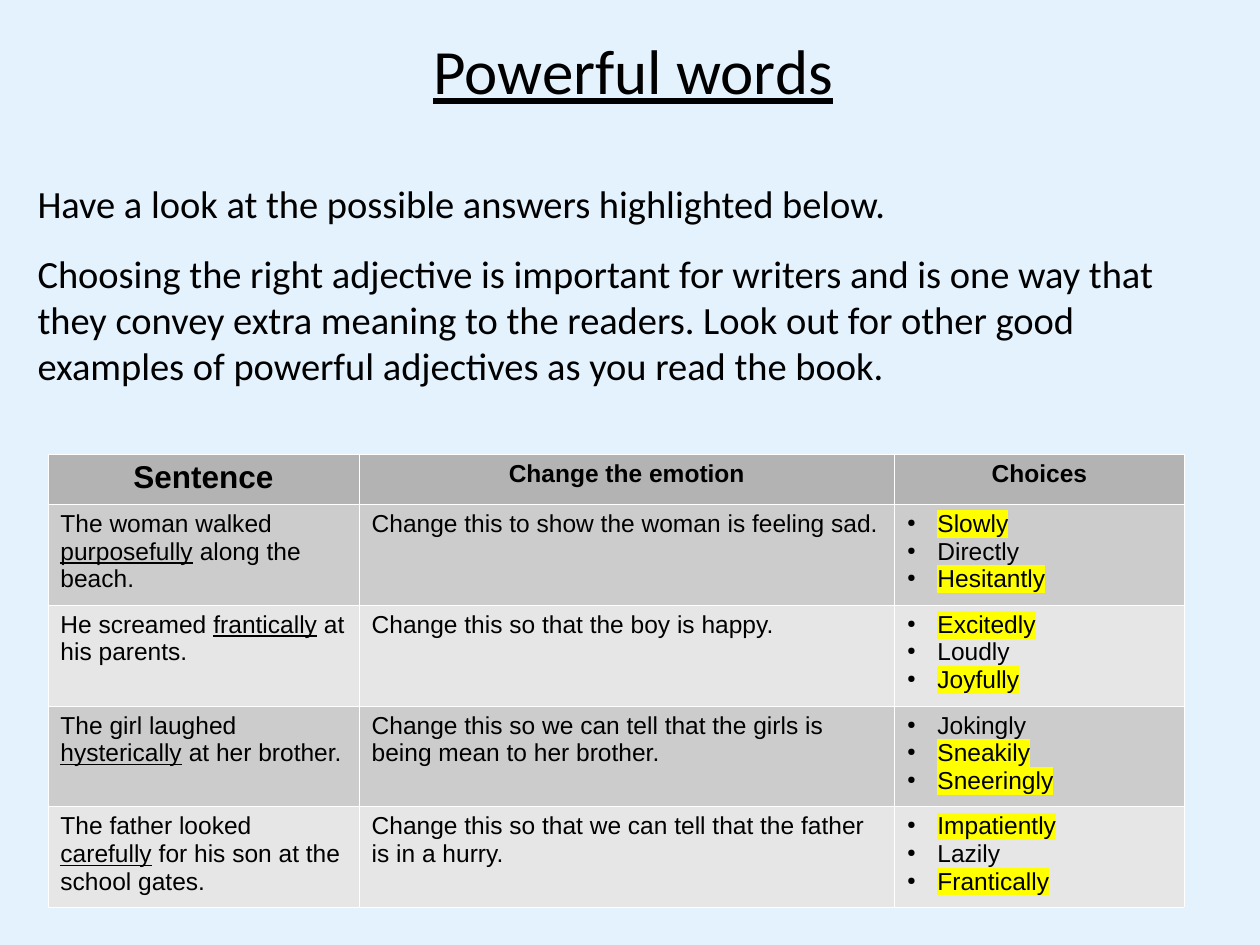
from copy import deepcopy
from dataclasses import dataclass

from lxml.etree import SubElement
from pptx import Presentation
from pptx.dml.color import RGBColor
from pptx.enum.text import MSO_ANCHOR, MSO_AUTO_SIZE, PP_ALIGN
from pptx.oxml import parse_xml
from pptx.oxml.ns import nsdecls, qn
from pptx.util import Inches, Pt

W, H = 10, 7.5
BLACK, YELLOW = "000000", "FFFF00"
HEADER_FILL, BAND_FILLS = "B3B3B3", ("CCCCCC", "E6E6E6")
COLUMNS = (2.47, 4.25, 2.3)
HEADER_H, ROW_H = 0.4, 0.8


@dataclass(frozen=True)
class Run:
    text: str
    size: float = 14
    font: str = "Arial"
    bold: bool = False
    underline: bool = False
    highlight: str = ""


@dataclass(frozen=True)
class Exercise:
    before: str
    word: str
    after: str
    change: str
    choices: tuple[str, ...]
    answers: tuple[int, ...]


HEADINGS = (("Sentence", 18), ("Change the emotion", 14), ("Choices", 14))
EXERCISES = (
    Exercise("The woman walked ", "purposefully", " along the beach.",
             "Change this to show the woman is feeling sad.",
             ("Slowly", "Directly", "Hesitantly"), (0, 2)),
    Exercise("He screamed ", "frantically", " at his parents.",
             "Change this so that the boy is happy.",
             ("Excitedly", "Loudly", "Joyfully"), (0, 2)),
    Exercise("The girl laughed ", "hysterically", " at her brother.",
             "Change this so we can tell that the girls is being mean to her brother.",
             ("Jokingly", "Sneakily", "Sneeringly"), (1, 2)),
    Exercise("The father looked", " carefully", " for his son at the school gates.",
             "Change this so that we can tell that the father is in a hurry.",
             ("Impatiently", "Lazily", "Frantically"), (0, 2)),
)
BODY = (
    "Have a look at the possible answers highlighted below.",
    "Choosing the right adjective is important for writers and is one way that "
    "they convey extra meaning to the readers. Look out for other good examples "
    "of powerful adjectives as you read the book.",
)


def color(value: str) -> RGBColor:
    return RGBColor.from_string(value)


def add_run(p, run: Run) -> None:
    r = p.add_run()
    r.text = run.text
    f = r.font
    f.size, f.name, f.bold, f.underline = Pt(run.size), run.font, run.bold, run.underline
    f.color.rgb = color(BLACK)
    if run.highlight:
        mark = parse_xml(f'<a:highlight {nsdecls("a")}><a:srgbClr val="{run.highlight}"/>'
                         '</a:highlight>')
        r._r.rPr.find(qn("a:solidFill")).addnext(mark)


def add_bullet(p) -> None:
    pPr = p._p.get_or_add_pPr()
    indent = Inches(0.24)
    pPr.set("marL", str(indent))
    pPr.set("indent", str(-indent))
    SubElement(SubElement(pPr, qn("a:buClr")), qn("a:srgbClr"), val=BLACK)
    SubElement(pPr, qn("a:buSzPct"), val="45000")
    SubElement(pPr, qn("a:buChar"), char="●")


def set_frame(tf) -> None:
    tf.word_wrap = True
    tf.auto_size = MSO_AUTO_SIZE.NONE
    tf.vertical_anchor = MSO_ANCHOR.TOP
    tf.margin_left = tf.margin_right = Inches(0.1)
    tf.margin_top = tf.margin_bottom = Inches(0.05)


def fill_cell(cell, fill: str, paragraphs: list[list[Run]],
              align=PP_ALIGN.LEFT, bullets: bool = False) -> None:
    cell.fill.solid()
    cell.fill.fore_color.rgb = color(fill)
    cell.margin_left = cell.margin_right = Inches(0.1)
    cell.margin_top = cell.margin_bottom = Inches(0.05)
    # White hairlines on all four sides
    for i, side in enumerate(("lnL", "lnR", "lnT", "lnB")):
        line = parse_xml(f'<a:{side} {nsdecls("a")} w="{Pt(0.06)}"><a:solidFill>'
                         f'<a:srgbClr val="FFFFFF"/></a:solidFill></a:{side}>')
        cell._tc.tcPr.insert(i, line)
    tf = cell.text_frame
    for i, runs in enumerate(paragraphs):
        p = tf.paragraphs[0] if i == 0 else tf.add_paragraph()
        p.alignment = align
        if bullets:
            add_bullet(p)
        for run in runs:
            add_run(p, run)


def add_body(s):
    x, y, w, h = map(Inches, (0.2, 1.38, 9.53, 1.76))
    outline = s.shapes.build_freeform(x, y)
    outline.add_line_segments([(x + w, y), (x + w, y + h), (x, y + h)], close=True)
    sp = outline.convert_to_shape()
    sp.shadow.inherit = False
    sp.fill.background()
    sp.line.fill.background()
    tf = sp.text_frame
    set_frame(tf)
    for i, text in enumerate(BODY):
        p = tf.paragraphs[0] if i == 0 else tf.add_paragraph()
        p.alignment = PP_ALIGN.LEFT
        p.space_before, p.space_after = Pt(13), Pt(0.5)
        add_run(p, Run(text, 22, "Calibri"))
    return sp


def add_title(s, body) -> None:
    sp = s.shapes.title
    sp.left, sp.top, sp.width, sp.height = map(Inches, (0.2, 0.2, 9.65, 0.7))
    # The title shares the body's freeform outline, scaled to its own size
    outline = body._element.spPr.find(qn("a:custGeom"))
    sp._element.spPr.append(deepcopy(outline))
    set_frame(sp.text_frame)
    p = sp.text_frame.paragraphs[0]
    p.alignment = PP_ALIGN.CENTER
    p.space_before = p.space_after = Pt(0.5)
    add_run(p, Run("Powerful words", 36, "Calibri", underline=True))


def add_exercises(s) -> None:
    n = len(EXERCISES)
    frame = s.shapes.add_table(n + 1, len(COLUMNS), Inches(0.38), Inches(0.48 * H),
                               Inches(sum(COLUMNS)), Inches(HEADER_H + n * ROW_H))
    table = frame.table
    table.first_row = table.horz_banding = False
    for column, width in zip(table.columns, COLUMNS):
        column.width = Inches(width)
    for i, row in enumerate(table.rows):
        row.height = Inches(ROW_H if i else HEADER_H)

    # Header row
    for c, (text, size) in enumerate(HEADINGS):
        fill_cell(table.cell(0, c), HEADER_FILL, [[Run(text, size, bold=True)]],
                  PP_ALIGN.CENTER)

    # Banded exercise rows, with the possible answers highlighted
    for i, ex in enumerate(EXERCISES):
        fill = BAND_FILLS[i % 2]
        sentence = [Run(ex.before), Run(ex.word, underline=True), Run(ex.after)]
        choices = [[Run(text, highlight=YELLOW if k in ex.answers else "")]
                   for k, text in enumerate(ex.choices)]
        fill_cell(table.cell(i + 1, 0), fill, [sentence])
        fill_cell(table.cell(i + 1, 1), fill, [[Run(ex.change)]])
        fill_cell(table.cell(i + 1, 2), fill, choices, bullets=True)


def main() -> None:
    prs = Presentation()
    prs.slide_width, prs.slide_height = Inches(W), Inches(H)
    s = prs.slides.add_slide(prs.slide_layouts[5])
    s.background.fill.solid()
    s.background.fill.fore_color.rgb = color("E3F2FD")
    body = add_body(s)
    add_title(s, body)
    add_exercises(s)
    prs.save("out.pptx")


if __name__ == "__main__":
    main()
